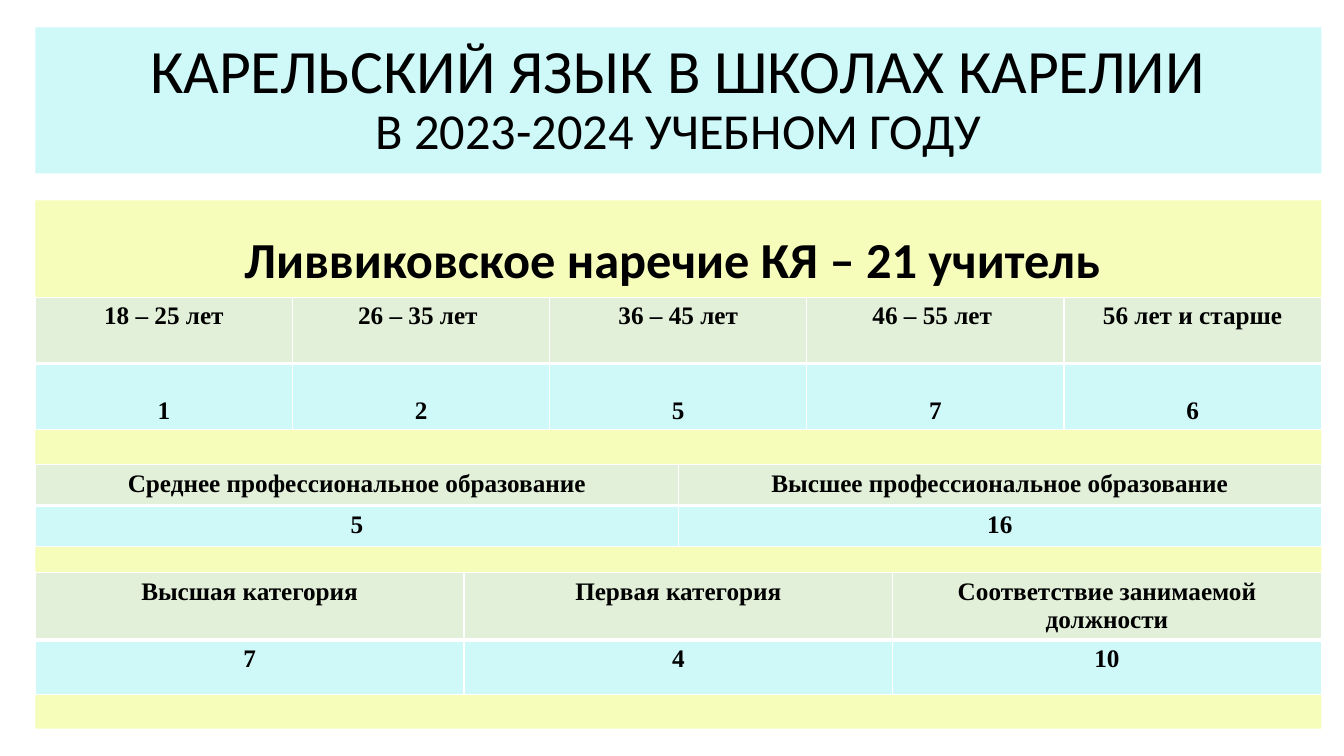
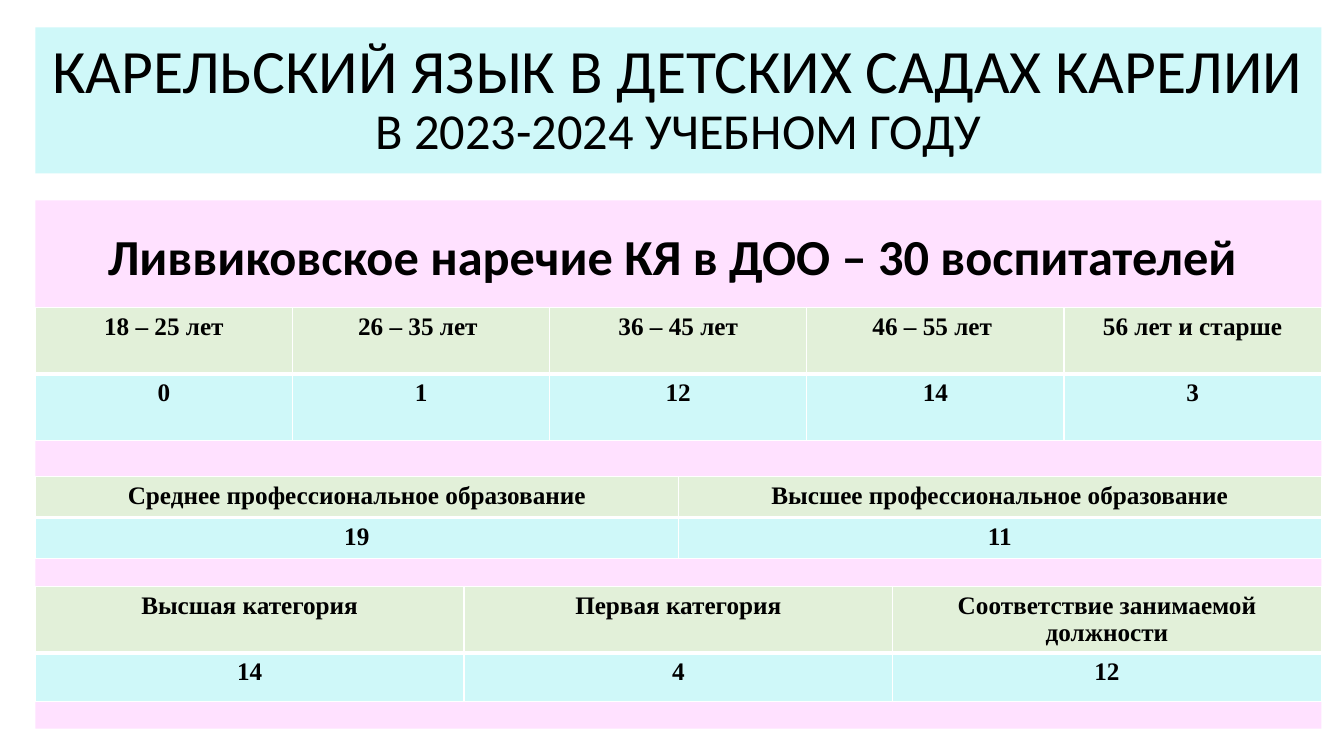
from lxml import etree
from pptx import Presentation
from pptx.dml.color import RGBColor
from pptx.enum.shapes import MSO_SHAPE
from pptx.enum.text import MSO_ANCHOR, MSO_AUTO_SIZE, PP_ALIGN
from pptx.oxml.ns import qn
from pptx.util import Cm, Pt

RECTANGLE = MSO_SHAPE.RECTANGLE
TOP, MIDDLE, BOTTOM = MSO_ANCHOR.TOP, MSO_ANCHOR.MIDDLE, MSO_ANCHOR.BOTTOM
CENTER = PP_ALIGN.CENTER
NO_AUTOFIT = MSO_AUTO_SIZE.NONE

TITLE_ONLY = 5
LEFT, WIDTH = 0.89, 32.41

AGES = ["18 – 25 лет", "26 – 35 лет ", "36 – 45 лет", "46 – 55 лет ", "56 лет и старше"]
EDUCATION = ["Среднее профессиональное образование", "Высшее профессиональное образование"]
CATEGORIES = ["Высшая категория", "Первая категория", "Соответствие занимаемой должности"]


def color(hex_string):
    return RGBColor.from_string(hex_string)


class Deck:
    TEXT, BORDER = "000000", "FFFFFF"
    AQUA, GREEN = "CFF8F9", "E2F0D9"
    HEADING_FONT, TABLE_FONT = "Calibri", "Times New Roman"

    def __init__(self):
        self.presentation = Presentation()
        self.presentation.slide_width = Cm(33.87)
        self.presentation.slide_height = Cm(19.05)
        self.slide = None

    def new_slide(self):
        layout = self.presentation.slide_layouts[TITLE_ONLY]
        self.slide = self.presentation.slides.add_slide(layout)

    def add_run(self, paragraph, text, size, font_name, bold=False):
        run = paragraph.add_run()
        run.text = text
        run.font.size = Pt(size)
        run.font.name = font_name
        run.font.bold = bold
        run.font.color.rgb = color(self.TEXT)

    def fill(self, target, hex_string):
        target.fill.solid()
        target.fill.fore_color.rgb = color(hex_string)

    def centered_paragraph(self, frame, anchor, line_spacing=None):
        frame.word_wrap = True
        frame.vertical_anchor = anchor
        paragraph = frame.paragraphs[0]
        paragraph.alignment = CENTER
        paragraph.line_spacing = line_spacing
        return paragraph

    def title(self, subject, period):
        band = self.slide.shapes.title
        band.left, band.top = Cm(LEFT), Cm(0.69)
        band.width, band.height = Cm(WIDTH), Cm(3.68)
        self.fill(band, self.AQUA)
        band.text_frame.auto_size = NO_AUTOFIT
        paragraph = self.centered_paragraph(band.text_frame, MIDDLE, 0.9)
        self.add_run(paragraph, subject, 44, self.HEADING_FONT)
        paragraph.add_line_break()
        self.add_run(paragraph, period, 36, self.HEADING_FONT)

    def panel(self, heading, background, inset):
        panel = self.slide.shapes.add_shape(
            RECTANGLE, Cm(LEFT), Cm(5.05), Cm(WIDTH), Cm(13.31))
        panel.shadow.inherit = False
        panel.line.fill.background()
        self.fill(panel, background)
        panel.text_frame.margin_top = Cm(inset)
        paragraph = self.centered_paragraph(panel.text_frame, TOP, 0.9)
        self.add_run(paragraph, heading, 36, self.HEADING_FONT, bold=True)

    def borders(self, cell, widths):
        """Draw cell borders; widths maps L, R, T and B to points."""
        properties = cell._tc.get_or_add_tcPr()
        for side, points in widths.items():
            line = etree.SubElement(properties, qn(f"a:ln{side}"), w=str(Pt(points)))
            solid = etree.SubElement(line, qn("a:solidFill"))
            etree.SubElement(solid, qn("a:srgbClr"), val=self.BORDER)

    def table(self, top, row_heights, labels, values, value_anchor=TOP):
        """Add a row of labels above a row of values, in equal columns."""
        grid = self.slide.shapes.add_table(
            2, len(labels), Cm(LEFT), Cm(top), Cm(WIDTH), Cm(sum(row_heights))).table
        for column in grid.columns:
            column.width = Cm(WIDTH / len(labels))
        row_styles = [(labels, self.GREEN, TOP, 1, 3), (values, self.AQUA, value_anchor, 3, 1)]
        for row, (texts, background, anchor, above, below) in enumerate(row_styles):
            grid.rows[row].height = Cm(row_heights[row])
            for column, text in enumerate(texts):
                cell = grid.cell(row, column)
                self.borders(cell, {"L": 1, "R": 1, "T": above, "B": below})
                self.fill(cell, background)
                cell.vertical_anchor = anchor
                paragraph = cell.text_frame.paragraphs[0]
                paragraph.alignment = CENTER
                self.add_run(paragraph, str(text), 18, self.TABLE_FONT, bold=True)

    def staff_slide(self, subject, heading, background, inset, ages, education, categories):
        """Build a slide; each table is given as top, row heights, values and anchor."""
        self.new_slide()
        self.title(subject, "В 2023-2024 УЧЕБНОМ ГОДУ")
        self.panel(heading, background, inset)
        for labels, (top, heights, values, anchor) in zip(
                (AGES, EDUCATION, CATEGORIES), (ages, education, categories)):
            self.table(top, heights, labels, values, anchor)


def main():
    deck = Deck()
    deck.staff_slide(
        "КАРЕЛЬСКИЙ ЯЗЫК В ШКОЛАХ КАРЕЛИИ",
        "Ливвиковское наречие КЯ – 21 учитель ", "F6FCBA", 0.87,
        ages=(7.49, (1.67, 1.67), (1, 2, 5, 7, 6), BOTTOM),
        education=(11.71, (1.03, 1.03), (5, 16), TOP),
        categories=(14.43, (1.69, 1.39), (7, 4, 10), TOP))
    deck.staff_slide(
        "КАРЕЛЬСКИЙ ЯЗЫК В ДЕТСКИХ САДАХ КАРЕЛИИ",
        "Ливвиковское наречие КЯ в ДОО – 30 воспитателей ", "FFE1FF", 0.79,
        ages=(7.75, (1.67, 1.67), (0, 1, 12, 14, 3), TOP),
        education=(12.01, (1.03, 1.03), (19, 11), TOP),
        categories=(14.78, (1.67, 1.22), (14, 4, 12), TOP))
    deck.presentation.save("out.pptx")


if __name__ == "__main__":
    main()
